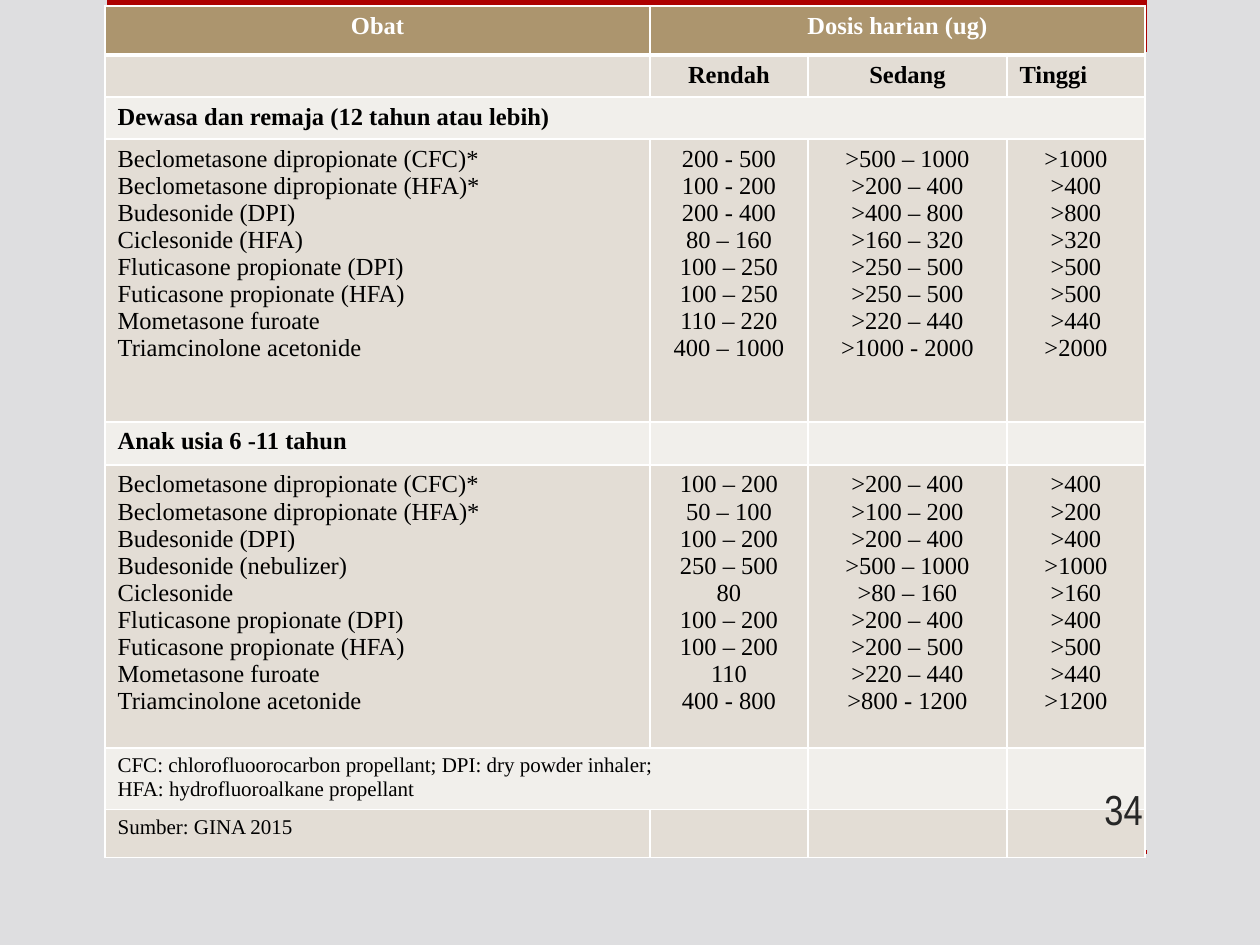
from lxml.etree import SubElement
from pptx import Presentation
from pptx.dml.color import RGBColor
from pptx.enum.shapes import MSO_SHAPE
from pptx.enum.text import MSO_ANCHOR, PP_ALIGN
from pptx.oxml.ns import qn
from pptx.util import Pt

HUE = {"back": "DEDEE0", "bar": "AD0101", "head": "AC956E", "dark": "E3DDD5",
       "light": "F1EFEB", "white": "FFFFFF", "black": "000000", "page": "262626"}
SIDE = {"l": PP_ALIGN.LEFT, "c": PP_ALIGN.CENTER, "r": PP_ALIGN.RIGHT}

# Content: drug, low, medium and high dose ("\v" breaks a line in a paragraph)
ADULT = [
    ["Beclometasone dipropionate (CFC)*", "Beclometasone dipropionate (HFA)*",
     "Budesonide (DPI)", "Ciclesonide (HFA)", "Fluticasone propionate (DPI)",
     "Futicasone propionate (HFA)", "Mometasone furoate\vTriamcinolone acetonide"],
    ["200 - 500", "100 - 200", "200 - 400", "80 – 160",
     "100 – 250", "100 – 250", "110 – 220", "400 – 1000"],
    [">500 – 1000", ">200 – 400", ">400 – 800", ">160 – 320",
     ">250 – 500", ">250 – 500", ">220 – 440", ">1000 - 2000"],
    [">1000", ">400", ">800", ">320", ">500", ">500", ">440", ">2000"],
]
CHILD = [
    ["Beclometasone dipropionate (CFC)*", "Beclometasone dipropionate (HFA)*",
     "Budesonide (DPI)", "Budesonide (nebulizer)", "Ciclesonide",
     "Fluticasone propionate (DPI)", "Futicasone propionate (HFA)",
     "Mometasone furoate\vTriamcinolone acetonide"],
    ["100 – 200", "50 – 100", "100 – 200", "250 – 500", "80",
     "100 – 200", "100 – 200", "110", "400 - 800"],
    [">200 – 400", ">100 – 200", ">200 – 400", ">500 – 1000", ">80 – 160",
     ">200 – 400", ">200 – 500", ">220 – 440", ">800 - 1200"],
    [">400", ">200", ">400", ">1000", ">160", ">400", ">500", ">440", ">1200"],
]
NOTE = ["CFC: chlorofluoorocarbon propellant; DPI: dry powder inhaler;",
        "HFA: hydrofluoroalkane propellant"]

# Rows: height, fill, cells, alignment of each column, text format
ROWS = [
    (49, "head", [["Obat"], ["Dosis harian (ug)"], [], []], "cccc",
     {"bold": True, "hue": "white"}),
    (42, "dark", [[], ["Rendah"], ["Sedang"], ["Tinggi"]], "lccl", {"bold": True}),
    (42, "light", [["Dewasa dan remaja (12 tahun atau lebih)"], [], [], []], "llll",
     {"bold": True}),
    (283, "dark", ADULT, "lccc", {}),
    (43, "light", [["Anak usia 6 -11 tahun"], [], [], []], "llll", {"bold": True}),
    (283, "dark", CHILD, "lccc", {}),
    (62, "light", [NOTE, [], [], []], "llll", {"size": 12}),
    (48, "dark", [["Sumber: GINA 2015"], [], [], []], "llll", {"size": 12}),
]
COLS = [545, 158, 199, 138]
SPANS = [(0, 1, 3), (2, 0, 3), (6, 0, 1)]  # row, first column, last column
BARS = [(107, 0, 1040, 52), (107, 850, 1040, 4)]


def px(n):
    return round(n * 914400 / 126)


def tint(name):
    return RGBColor.from_string(HUE[name])


def put(frame, lines, size=14, face="Times New Roman", hue="black",
        bold=False, side="l"):
    for i, line in enumerate(lines):
        para = frame.paragraphs[0] if i == 0 else frame.add_paragraph()
        para.text = line
        para.alignment = SIDE[side]
        for run in para.runs:
            font = run.font
            font.size, font.name, font.bold = Pt(size), face, bold
            font.color.rgb = tint(hue)


def edge(cell, base):
    props = cell._tc.get_or_add_tcPr()
    for tag, wide in (("lnL", 1), ("lnR", 1), ("lnT", 1), ("lnB", base)):
        line = SubElement(props, qn("a:" + tag), w=str(Pt(wide)))
        fill = SubElement(line, qn("a:solidFill"))
        SubElement(fill, qn("a:srgbClr"), val=HUE["white"])


def main():
    deck = Presentation()
    deck.slide_width, deck.slide_height = px(1260), px(945)
    slide = deck.slides.add_slide(deck.slide_layouts[6])
    slide.background.fill.solid()
    slide.background.fill.fore_color.rgb = tint("back")

    # Red bars behind the table
    for box in BARS:
        bar = slide.shapes.add_shape(MSO_SHAPE.RECTANGLE, *map(px, box))
        bar.shadow.inherit = False
        bar.fill.solid()
        bar.fill.fore_color.rgb = tint("bar")
        bar.line.fill.background()

    # Dose table
    high = sum(row[0] for row in ROWS)
    table = slide.shapes.add_table(len(ROWS), len(COLS), px(105), px(6),
                                   px(sum(COLS)), px(high)).table
    for col, wide in zip(table.columns, COLS):
        col.width = px(wide)
    for r, first, last in SPANS:
        table.cell(r, first).merge(table.cell(r, last))
    for r, (tall, fill, cells, sides, form) in enumerate(ROWS):
        table.rows[r].height = px(tall)
        for c, lines in enumerate(cells):
            cell = table.cell(r, c)
            edge(cell, 3 if r == 0 else 1)
            cell.fill.solid()
            cell.fill.fore_color.rgb = tint(fill)
            if lines:
                put(cell.text_frame, lines, side=sides[c], **form)
            else:  # keeps an empty cell from stretching its row
                cell.margin_top = cell.margin_bottom = 0

    # Page number
    page = slide.shapes.add_textbox(px(1050), px(784), px(105), px(50)).text_frame
    page.word_wrap = True
    page.vertical_anchor = MSO_ANCHOR.MIDDLE
    put(page, ["34"], size=24, face="Arial Narrow", hue="page", side="r")

    deck.save("out.pptx")


if __name__ == "__main__":
    main()
